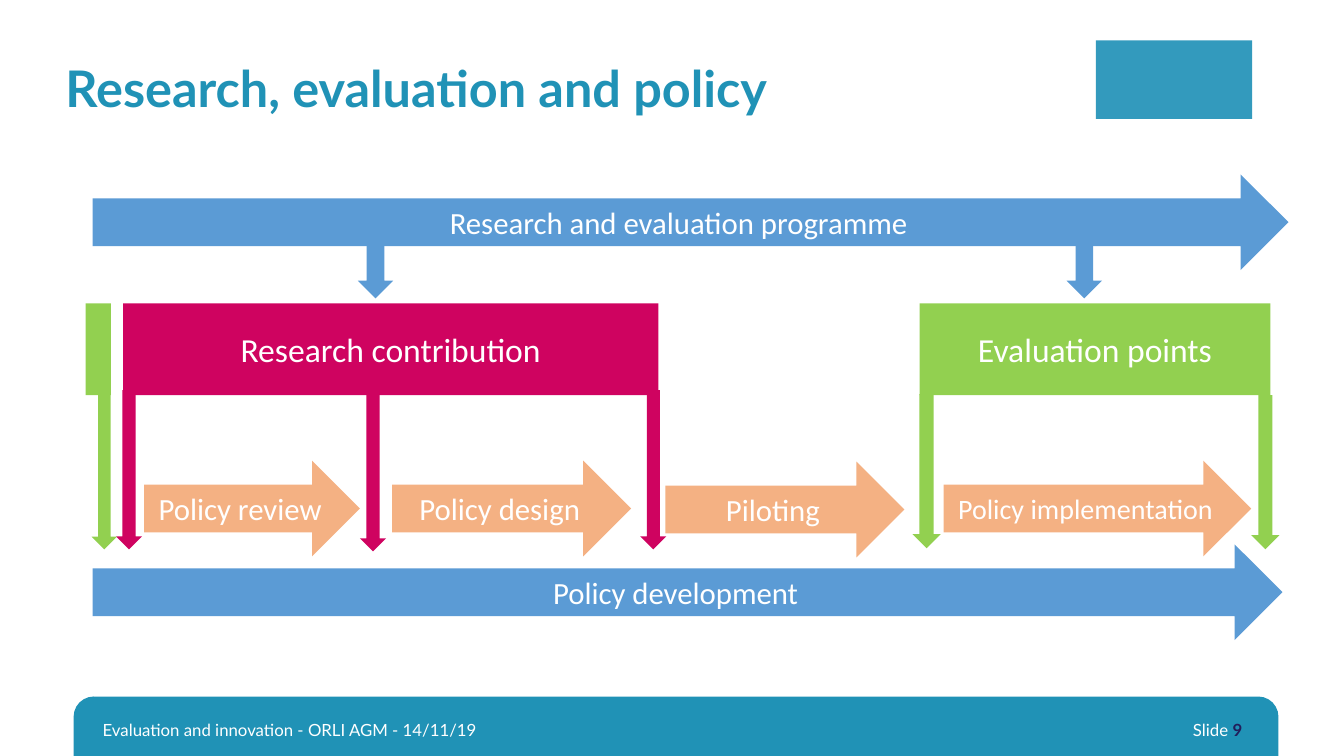
from dataclasses import dataclass

from pptx import Presentation
from pptx.dml.color import RGBColor
from pptx.enum.shapes import MSO_SHAPE
from pptx.enum.text import MSO_ANCHOR, PP_ALIGN
from pptx.util import Inches, Pt


@dataclass(frozen=True)
class Theme:
    teal: str = "2092B6"
    emblem: str = "339ABD"
    navy: str = "221E5B"
    blue: str = "5B9BD5"
    peach: str = "F4B183"
    green: str = "92D050"
    magenta: str = "CF0360"
    white: str = "FFFFFF"
    heading_font: str = "Lato"
    diagram_font: str = "Calibri"
    title: int = 36
    box: int = 24
    arrow: int = 22
    small_arrow: int = 20
    footer: int = 12


THEME = Theme()


def write(holder, text, size, font=THEME.diagram_font, color=THEME.white,
          bold=False, align=PP_ALIGN.CENTER, line_spacing=None):
    """Append a run to the first paragraph of a shape or text box."""
    frame = holder.text_frame
    frame.word_wrap = True
    frame.vertical_anchor = MSO_ANCHOR.MIDDLE
    paragraph = frame.paragraphs[0]
    paragraph.alignment = align
    if line_spacing:
        paragraph.line_spacing = line_spacing
    run = paragraph.add_run()
    run.text = text
    run.font.name = font
    run.font.size = Pt(size)
    run.font.bold = bold
    run.font.color.rgb = RGBColor.from_string(color)


def add_text_area(slide, left, top, width, height):
    return slide.shapes.add_textbox(
        Inches(left), Inches(top), Inches(width), Inches(height))


def add_block(slide, kind, left, top, width, height, color, text="", size=THEME.arrow):
    block = slide.shapes.add_shape(
        kind, Inches(left), Inches(top), Inches(width), Inches(height))
    block.shadow.inherit = False
    block.fill.solid()
    block.fill.fore_color.rgb = RGBColor.from_string(color)
    block.line.fill.background()
    if text:
        write(block, text, size)
    return block


def add_header(slide):
    title = add_text_area(slide, 0.55, 0.5, 9.72, 0.81)
    write(title, "Research, evaluation and policy", THEME.title, font=THEME.heading_font,
          color=THEME.teal, bold=True, align=PP_ALIGN.LEFT, line_spacing=0.9)
    add_block(slide, MSO_SHAPE.RECTANGLE, 10.87, 0.4, 1.55, 0.78, THEME.emblem)


def add_footer(slide):
    band = add_block(slide, MSO_SHAPE.ROUND_2_SAME_RECTANGLE,
                     0.73, 6.91, 11.95, 0.59, THEME.teal)
    band.adjustments[0] = 0.34
    event = add_text_area(slide, 0.92, 7.04, 8.05, 0.4)
    write(event, "Evaluation and innovation - ORLI AGM - 14/11/19", THEME.footer,
          font=THEME.heading_font, align=PP_ALIGN.LEFT)
    page = add_text_area(slide, 11.25, 7.04, 1.17, 0.4)
    write(page, "Slide ", THEME.footer, font=THEME.heading_font, align=PP_ALIGN.RIGHT)
    write(page, "9", THEME.footer, font=THEME.heading_font, color=THEME.navy,
          bold=True, align=PP_ALIGN.RIGHT)


def add_right_arrows(slide):
    arrows = [
        (0.92, 5.4, 11.8, THEME.blue, "Policy development", THEME.arrow),
        (1.43, 4.57, 2.14, THEME.peach, "Policy review", THEME.arrow),
        (3.89, 4.57, 2.37, THEME.peach, "Policy design", THEME.arrow),
        (6.6, 4.58, 2.37, THEME.peach, "Piloting", THEME.arrow),
        (9.36, 4.57, 3.05, THEME.peach, "Policy implementation", THEME.small_arrow),
        (0.92, 1.73, 11.86, THEME.blue, "Research and evaluation programme", THEME.arrow),
    ]
    for left, top, width, color, text, size in arrows:
        add_block(slide, MSO_SHAPE.RIGHT_ARROW, left, top, width, 0.95, color, text, size)


def add_contributions(slide):
    boxes = [
        (0.85, 0.25, THEME.green, ""),
        (1.22, 5.31, THEME.magenta, "Research contribution"),
        (9.12, 3.48, THEME.green, "Evaluation points"),
    ]
    for left, width, color, text in boxes:
        add_block(slide, MSO_SHAPE.RECTANGLE, left, 3.01, width, 0.91, color, text, THEME.box)


def add_down_arrows(slide):
    arrows = [
        (1.15, 3.87, 0.26, 1.58, THEME.magenta),
        (3.57, 3.89, 0.26, 1.58, THEME.magenta),
        (6.35, 3.87, 0.26, 1.58, THEME.magenta),
        (0.91, 3.87, 0.25, 1.58, THEME.green),
        (9.05, 3.91, 0.28, 1.53, THEME.green),
        (12.41, 3.92, 0.28, 1.53, THEME.green),
        (3.55, 2.44, 0.35, 0.52, THEME.blue),
        (10.58, 2.44, 0.35, 0.52, THEME.blue),
    ]
    for left, top, width, height, color in arrows:
        add_block(slide, MSO_SHAPE.DOWN_ARROW, left, top, width, height, color)


def main():
    deck = Presentation()
    deck.slide_width = Inches(13.33)
    deck.slide_height = Inches(7.5)
    slide = deck.slides.add_slide(deck.slide_layouts[6])
    add_header(slide)
    add_footer(slide)
    add_right_arrows(slide)
    add_contributions(slide)
    add_down_arrows(slide)
    deck.save("out.pptx")


if __name__ == "__main__":
    main()
